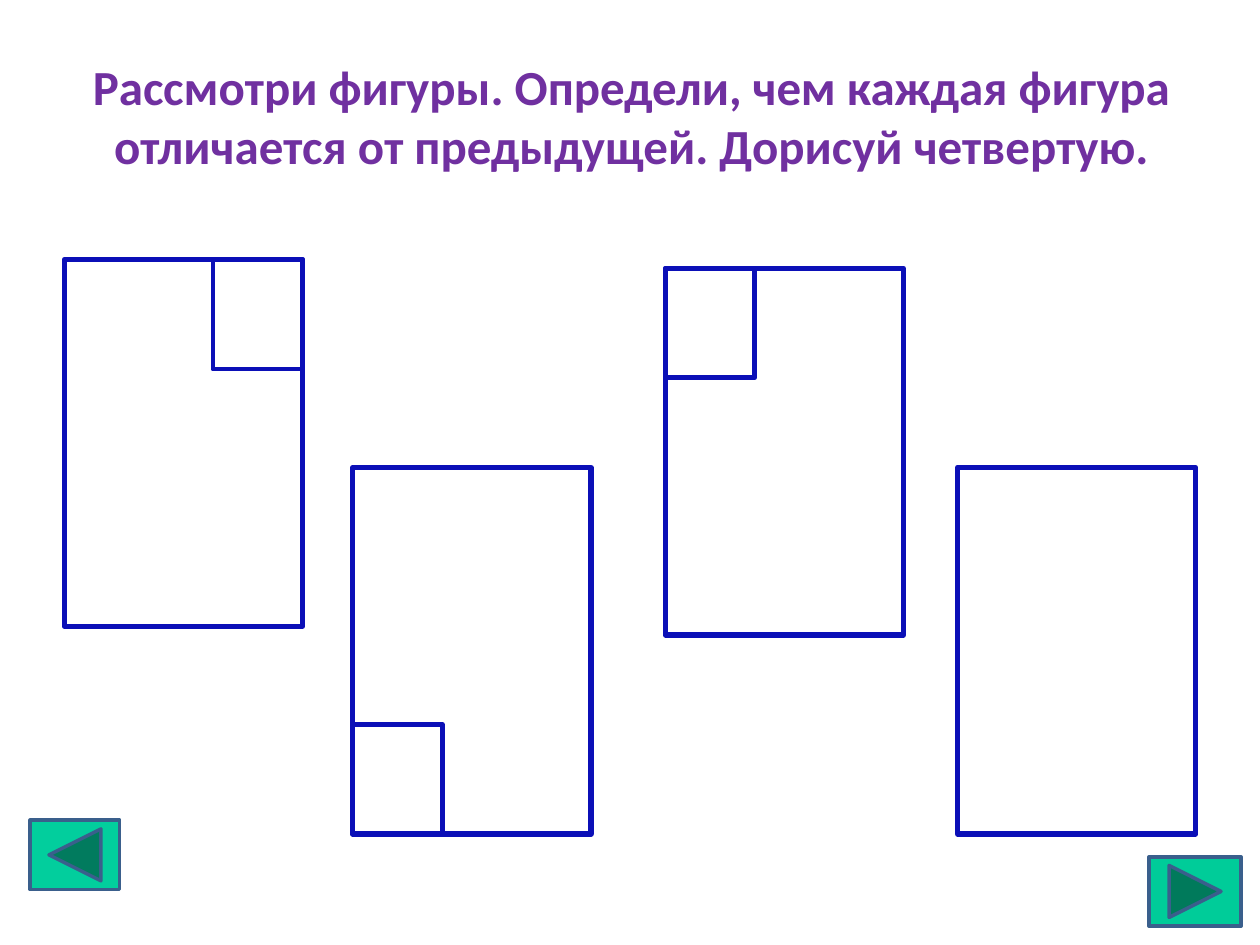
from pptx import Presentation
from pptx.dml.color import RGBColor
from pptx.enum.shapes import MSO_SHAPE as Shape
from pptx.enum.text import MSO_ANCHOR as Anchor, PP_ALIGN as Align
from pptx.util import Inches, Pt

PURPLE = RGBColor(0x70, 0x30, 0xA0)
BLUE = RGBColor(0x0B, 0x0F, 0xB7)
STEEL = RGBColor(0x3A, 0x5F, 0x8C)
GREEN = RGBColor(0x00, 0xCC, 0x99)
MINT = RGBColor(0x02, 0xCE, 0x9D)

prs = Presentation()
prs.slide_width, prs.slide_height = Inches(10), Inches(7.5)
slide = prs.slides.add_slide(prs.slide_layouts[6])


def add_outlined(kind, left, top, width, height, color, weight, fill=None):
    shape = slide.shapes.add_shape(
        kind, Inches(left), Inches(top), Inches(width), Inches(height))
    shape.shadow.inherit = False
    shape.line.color.rgb = color
    shape.line.width = Pt(weight)
    if fill is None:
        shape.fill.background()
    else:
        shape.fill.solid()
        shape.fill.fore_color.rgb = fill


# Task heading
heading = slide.shapes.add_textbox(
    Inches(0.51), Inches(0.29), Inches(9), Inches(1.25)).text_frame
heading.word_wrap = True
heading.vertical_anchor = Anchor.MIDDLE
sentence = heading.paragraphs[0]
sentence.alignment = Align.CENTER
run = sentence.add_run()
run.text = ("Рассмотри фигуры. Определи, чем каждая фигура "
            "отличается от предыдущей. Дорисуй четвертую.")
run.font.name = "Calibri"
run.font.size = Pt(28)
run.font.bold = True
run.font.color.rgb = PURPLE

# Figures: a tall rectangle with a small one in a corner; the fourth is left empty
WIDTH, HEIGHT = 1.89, 2.91
CORNER_W, CORNER_H = 0.71, 0.87
figures = [
    (0.51, 2.06, "top right"),
    (2.8, 3.71, "bottom left"),
    (5.28, 2.13, "top left"),
    (7.6, 3.71, None),
]
for left, top, corner in figures:
    add_outlined(Shape.RECTANGLE, left, top, WIDTH, HEIGHT, BLUE, 3)
    if corner:
        corner_left = left + (WIDTH - CORNER_W if "right" in corner else 0)
        corner_top = top + (HEIGHT - CORNER_H if "bottom" in corner else 0)
        add_outlined(Shape.RECTANGLE, corner_left, corner_top,
                     CORNER_W, CORNER_H, BLUE, 2.75)

# Navigation buttons
add_outlined(Shape.ACTION_BUTTON_FORWARD_OR_NEXT,
             9.12, 6.8, 0.73, 0.55, STEEL, 2, GREEN)
add_outlined(Shape.ACTION_BUTTON_BACK_OR_PREVIOUS,
             0.24, 6.51, 0.71, 0.55, STEEL, 2, MINT)

prs.save("out.pptx")
